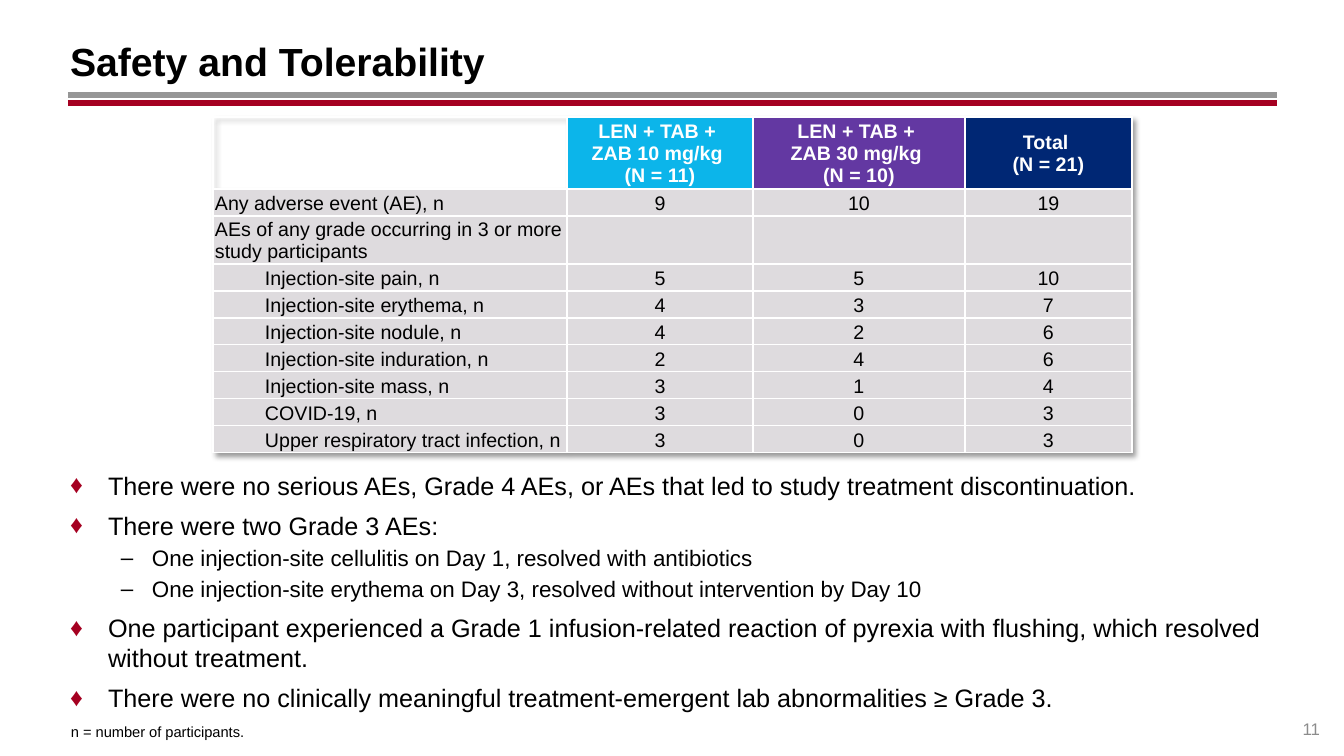
from lxml.etree import SubElement
from pptx import Presentation
from pptx.dml.color import RGBColor
from pptx.enum.shapes import MSO_CONNECTOR
from pptx.enum.text import MSO_ANCHOR, MSO_AUTO_SIZE, PP_ALIGN
from pptx.oxml import parse_xml
from pptx.oxml.ns import nsdecls, qn
from pptx.util import Emu, Pt

BLACK = RGBColor(0x00, 0x00, 0x00)
WHITE = RGBColor(0xFF, 0xFF, 0xFF)
GRAY = RGBColor(0x96, 0x96, 0x96)
PALE = RGBColor(0xDE, 0xDB, 0xDE)
DIM = RGBColor(0x8C, 0x8C, 0x8C)
RED = RGBColor(0xA5, 0x00, 0x21)
CYAN = RGBColor(0x0C, 0xB5, 0xEA)
PURPLE = RGBColor(0x63, 0x38, 0xA2)
NAVY = RGBColor(0x00, 0x27, 0x74)

HEADS = [
    ("", None),
    ("LEN + TAB + \nZAB 10 mg/kg \n(N = 11)", CYAN),
    ("LEN + TAB + \nZAB 30 mg/kg \n(N = 10)", PURPLE),
    ("Total \n(N = 21)", NAVY),
]
EVENTS = [
    ("Any adverse event (AE), n", 9, 10, 19),
    ("AEs of any grade occurring in 3 or more study participants", "", "", ""),
    ("Injection-site pain, n", 5, 5, 10),
    ("Injection-site erythema, n", 4, 3, 7),
    ("Injection-site nodule, n", 4, 2, 6),
    ("Injection-site induration, n", 2, 4, 6),
    ("Injection-site mass, n", 3, 1, 4),
    ("COVID-19, n", 3, 0, 3),
    ("Upper respiratory tract infection, n", 3, 0, 3),
]
POINTS = [
    (0, "There were no serious AEs, Grade 4 AEs, or AEs that led to study treatment discontinuation."),
    (0, "There were two Grade 3 AEs:"),
    (1, "One injection-site cellulitis on Day 1, resolved with antibiotics"),
    (1, "One injection-site erythema on Day 3, resolved without intervention by Day 10"),
    (0, "One participant experienced a Grade 1 infusion-related reaction of pyrexia "
        "with flushing, which resolved without treatment."),
    (0, "There were no clinically meaningful treatment-emergent lab abnormalities ≥ Grade 3."),
]


def px(n):
    """Turn pixels into EMU."""
    return Emu(round(n * 914400 / 100.8))


def place(shape, box):
    """Move a shape to its box."""
    shape.left, shape.top, shape.width, shape.height = map(px, box)


def style(para, size, color=BLACK, bold=False, align=PP_ALIGN.LEFT):
    """Set the font and alignment of a paragraph."""
    para.alignment = align
    font = para.font
    font.name, font.size, font.bold = "Arial", Pt(size), bold
    font.color.rgb = color


def indent(para, left, first):
    """Set the left margin and first-line indent of a paragraph."""
    props = para._p.get_or_add_pPr()
    props.set("marL", str(px(left)))
    props.set("indent", str(px(first)))
    return props


def frame(shape, box, anchor, pad=0):
    """Place a text shape and return its frame without side margins."""
    place(shape, box)
    text = shape.text_frame
    text.word_wrap = True
    text.auto_size = MSO_AUTO_SIZE.NONE
    text.vertical_anchor = anchor
    text.margin_left = text.margin_right = 0
    text.margin_top = text.margin_bottom = px(pad)
    return text


def header(slide, box):
    """Fill the title and draw the two rules across it."""
    text = frame(slide.shapes.title, box, MSO_ANCHOR.MIDDLE, 5)
    text.text = "Safety and Tolerability"
    style(text.paragraphs[0], 28, bold=True)
    left, top = box[:2]
    for drop, color in ((78, GRAY), (86, RED)):
        rule = slide.shapes.add_connector(
            MSO_CONNECTOR.STRAIGHT, px(left - 2), px(top + drop), px(left + 1207), px(top + drop))
        rule.line.color.rgb = color
        rule.line.width = Pt(4.25)
        SubElement(rule._element.spPr, qn("a:effectLst"))


def bullets(holder, box):
    """Fill the body with two levels of bullets."""
    text = frame(holder, box, MSO_ANCHOR.TOP, 5)
    looks = [(18, 7, 38, -38, "♦", RED), (16, 3, 82, -31, "–", BLACK)]
    for i, (level, words) in enumerate(POINTS):
        para = text.add_paragraph() if i else text.paragraphs[0]
        size, gap, left, first, mark, color = looks[level]
        para.text, para.level, para.space_before = words, level, Pt(gap)
        style(para, size)
        base = indent(para, left, first).find(qn("a:defRPr"))
        for part in (f'<a:buClr {nsdecls("a")}><a:srgbClr val="{color}"/></a:buClr>',
                     f'<a:buFont {nsdecls("a")} typeface="Arial"/>',
                     f'<a:buChar {nsdecls("a")} char="{mark}"/>'):
            base.addprevious(parse_xml(part))


def footnote(holder, box):
    """Fill the note under the body."""
    text = frame(holder, box, MSO_ANCHOR.BOTTOM)
    text.text = "n = number of participants."
    para = text.paragraphs[0]
    para.space_before = Pt(0)
    style(para, 10.5)
    base = indent(para, 0, 0).find(qn("a:defRPr"))
    base.addprevious(parse_xml(f'<a:buNone {nsdecls("a")}/>'))


def number(slide, box):
    """Write the page number."""
    text = frame(slide.shapes.add_textbox(0, 0, 0, 0), box, MSO_ANCHOR.BOTTOM)
    text.text = "11"
    style(text.paragraphs[0], 12, DIM, align=PP_ALIGN.RIGHT)


def fill(cell, words, paint, color, bold, align):
    """Write one cell and set its margins, borders and fill."""
    cell.margin_left = cell.margin_right = cell.margin_top = px(2)
    cell.margin_bottom = 0
    cell.vertical_anchor = MSO_ANCHOR.MIDDLE
    para = cell.text_frame.paragraphs[0]
    para.text = str(words)
    style(para, 14, color, bold, align)
    props = cell._tc.get_or_add_tcPr()
    for side in "LRTB":
        props.append(parse_xml(
            f'<a:ln{side} {nsdecls("a")} w="12700"><a:solidFill>'
            f'<a:srgbClr val="{WHITE}"/></a:solidFill></a:ln{side}>'))
    if paint is None:
        cell.fill.background()
    else:
        cell.fill.solid()
        cell.fill.fore_color.rgb = paint


def events(slide, box):
    """Build the table of adverse events with a soft shadow."""
    table = slide.shapes.add_table(len(EVENTS) + 1, len(HEADS), *map(px, box)).table
    table.first_row = table.horz_banding = False
    for col, width in zip(table.columns, (354, 186, 212, 167)):
        col.width = px(width)
    for row, height in zip(table.rows, [72, 27, 48] + [27] * 7):
        row.height = px(height)
    for c, (words, paint) in enumerate(HEADS):
        fill(table.cell(0, c), words, paint, WHITE, True, PP_ALIGN.CENTER)
    for r, event in enumerate(EVENTS, 1):
        for c, words in enumerate(event):
            align = PP_ALIGN.CENTER if c else PP_ALIGN.LEFT
            fill(table.cell(r, c), words, PALE, BLACK, False, align)
        if r > 2:
            para = table.cell(r, 0).text_frame.paragraphs[0]
            para.level = 1
            indent(para, 50, 0)
    table._tbl.tblPr.insert(0, parse_xml(
        f'<a:effectLst {nsdecls("a")}><a:outerShdw blurRad="50800" dist="38100" '
        'dir="2700000" algn="tl" rotWithShape="0"><a:srgbClr val="000000">'
        '<a:alpha val="40000"/></a:srgbClr></a:outerShdw></a:effectLst>'))


def main():
    """Build the slide and save it."""
    deck = Presentation()
    deck.slide_width, deck.slide_height = px(1344), px(756)
    slide = deck.slides.add_slide(deck.slide_layouts[3])
    body, note = list(slide.placeholders)[1:]
    header(slide, (70, 17, 1253, 87))
    bullets(body, (70, 465, 1207, 241))
    number(slide, (1254, 699, 66, 40))
    footnote(note, (71, 722, 1164, 18))
    events(slide, (213, 117, 919, 336))
    deck.save("out.pptx")


if __name__ == "__main__":
    main()
